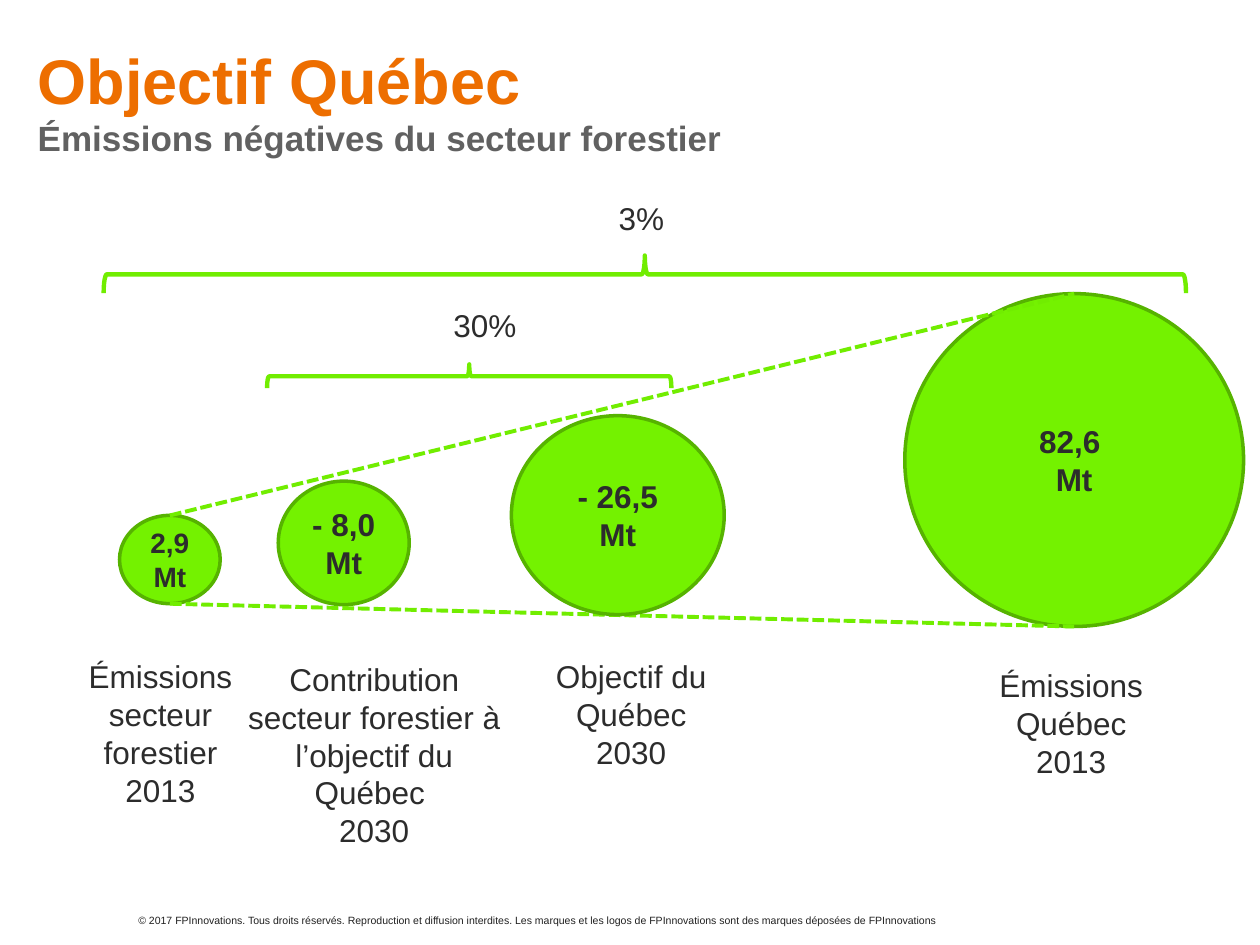
"""Build the slide comparing forest-sector emissions with the Québec target."""
from lxml import etree
from pptx import Presentation
from pptx import util as u
from pptx.dml.color import RGBColor
from pptx.enum import dml, shapes, text
from pptx.oxml.ns import qn

THEME = {
    "font": "Arial",
    "green": "74F200", "edge": "56B300", "guide": "71ED00",
    "title": {"size": 36, "color": "ED6E00", "bold": True},
    "subtitle": {"size": 20, "color": "616161", "bold": True},
    "body": {"size": 18, "color": "2C2C2C"},
    "value": {"size": 18, "color": "2C2C2C", "bold": True},
    "small_value": {"size": 16, "color": "2C2C2C", "bold": True},
    "footer": {"size": 6, "color": "212121"},
}
TITLE = [[("Objectif Québec ", "title"), ("Émissions négatives du secteur forestier", "subtitle")]]
TITLE_BOX = (0.51, 0.43, 24.41, 3.18)
FOOTER = ("© 2017 FPInnovations. Tous droits réservés. Reproduction et diffusion interdites. "
          "Les marques et les logos de FPInnovations sont des marques déposées de FPInnovations")
FOOTER_BOX = (2.54, 18.31, 18.16, 0.51)
CIRCLES = {
    "sector": ((2.41, 10.39, 2.03, 1.78), ["2,9 Mt"], "small_value"),
    "contribution": ((5.61, 9.7, 2.64, 2.49), ["- 8,0 Mt"], "value"),
    "quebec": ((18.24, 5.92, 6.83, 6.71), ["82,6 ", "Mt"], "value"),
    "target": ((10.31, 8.38, 4.29, 4.01), ["- 26,5 Mt"], "value"),
}
CAPTIONS = [
    ((1.37, 13.13, 3.73, 3.33), ["Émissions secteur forestier 2013"]),
    ((4.75, 13.18, 5.59, 4.11), ["Contribution secteur forestier à l’objectif du Québec ", "2030"]),
    ((10.92, 13.13, 3.61, 2.57), ["Objectif du Québec 2030"]),
    ((19.69, 13.31, 3.81, 2.57), ["Émissions Québec 2013"]),
]
BRACES = [
    ((12.62, -5.38, 0.76, 21.82), "3%", (12.22, 3.89, 1.45, 1.02)),
    ((9.22, 3.51, 0.48, 8.15), "30%", (8.89, 6.05, 1.8, 1.02)),
]


def lengths(values):
    return [u.Cm(value) for value in values]


def apply(target, values):
    for name, value in values.items():
        setattr(target, name, value)


def write(shape, paragraphs, align=text.PP_ALIGN.LEFT, anchor=text.MSO_ANCHOR.TOP, wrap=True):
    frame = shape.text_frame
    apply(frame, {"word_wrap": wrap, "vertical_anchor": anchor})
    for index, runs in enumerate(paragraphs):
        paragraph = frame.add_paragraph() if index else frame.paragraphs[0]
        paragraph.alignment = align
        for position, (words, style) in enumerate(runs):
            if position:
                paragraph.add_line_break()
            run = paragraph.add_run()
            run.text = words
            look = THEME[style]
            apply(run.font, {"name": THEME["font"], "size": u.Pt(look["size"]),
                             "bold": look.get("bold", False)})
            run.font.color.rgb = RGBColor.from_string(look["color"])


def add_text(slide, box, paragraphs, **layout):
    write(slide.shapes.add_textbox(*lengths(box)), paragraphs, **layout)


def set_line(shape, color, width):
    shape.line.color.rgb = RGBColor.from_string(color)
    shape.line.width = u.Pt(width)


def add_circle(slide, name):
    box, lines, style = CIRCLES[name]
    shape = slide.shapes.add_shape(shapes.MSO_SHAPE.OVAL, *lengths(box))
    shape.shadow.inherit = False
    shape.fill.solid()
    shape.fill.fore_color.rgb = RGBColor.from_string(THEME["green"])
    set_line(shape, THEME["edge"], 2)
    write(shape, [[(line, style)] for line in lines],
          align=text.PP_ALIGN.CENTER, anchor=text.MSO_ANCHOR.MIDDLE)


def add_guides(slide, first, last):
    ends = [(left + width / 2, top, top + height)
            for left, top, width, height in (CIRCLES[first][0], CIRCLES[last][0])]
    for edge in (1, 2):
        points = [coordinate for end in ends for coordinate in (end[0], end[edge])]
        guide = slide.shapes.add_connector(shapes.MSO_CONNECTOR.STRAIGHT, *lengths(points))
        set_line(guide, THEME["guide"], 2.25)
        guide.line.dash_style = dml.MSO_LINE.SQUARE_DOT
        etree.SubElement(guide._element.spPr, qn("a:effectLst"))


def add_brace(slide, box, label, label_box):
    brace = slide.shapes.add_shape(shapes.MSO_SHAPE.RIGHT_BRACE, *lengths(box))
    brace.rotation = 270
    brace.shadow.inherit = False
    brace.fill.background()
    set_line(brace, THEME["guide"], 2.5)
    add_text(slide, label_box, [[(label, "body")]], wrap=False)


def main():
    presentation = Presentation()
    apply(presentation, {"slide_width": u.Cm(25.4), "slide_height": u.Cm(19.05)})
    slide = presentation.slides.add_slide(presentation.slide_layouts[6])
    add_text(slide, FOOTER_BOX, [[(FOOTER, "footer")]])
    for name in ("sector", "contribution", "quebec"):
        add_circle(slide, name)
    add_guides(slide, "sector", "quebec")
    add_circle(slide, "target")
    for box, lines in CAPTIONS:
        add_text(slide, box, [[(line, "body")] for line in lines], align=text.PP_ALIGN.CENTER)
    for brace in BRACES:
        add_brace(slide, *brace)
    add_text(slide, TITLE_BOX, TITLE, anchor=text.MSO_ANCHOR.MIDDLE)
    presentation.save("out.pptx")


if __name__ == "__main__":
    main()
